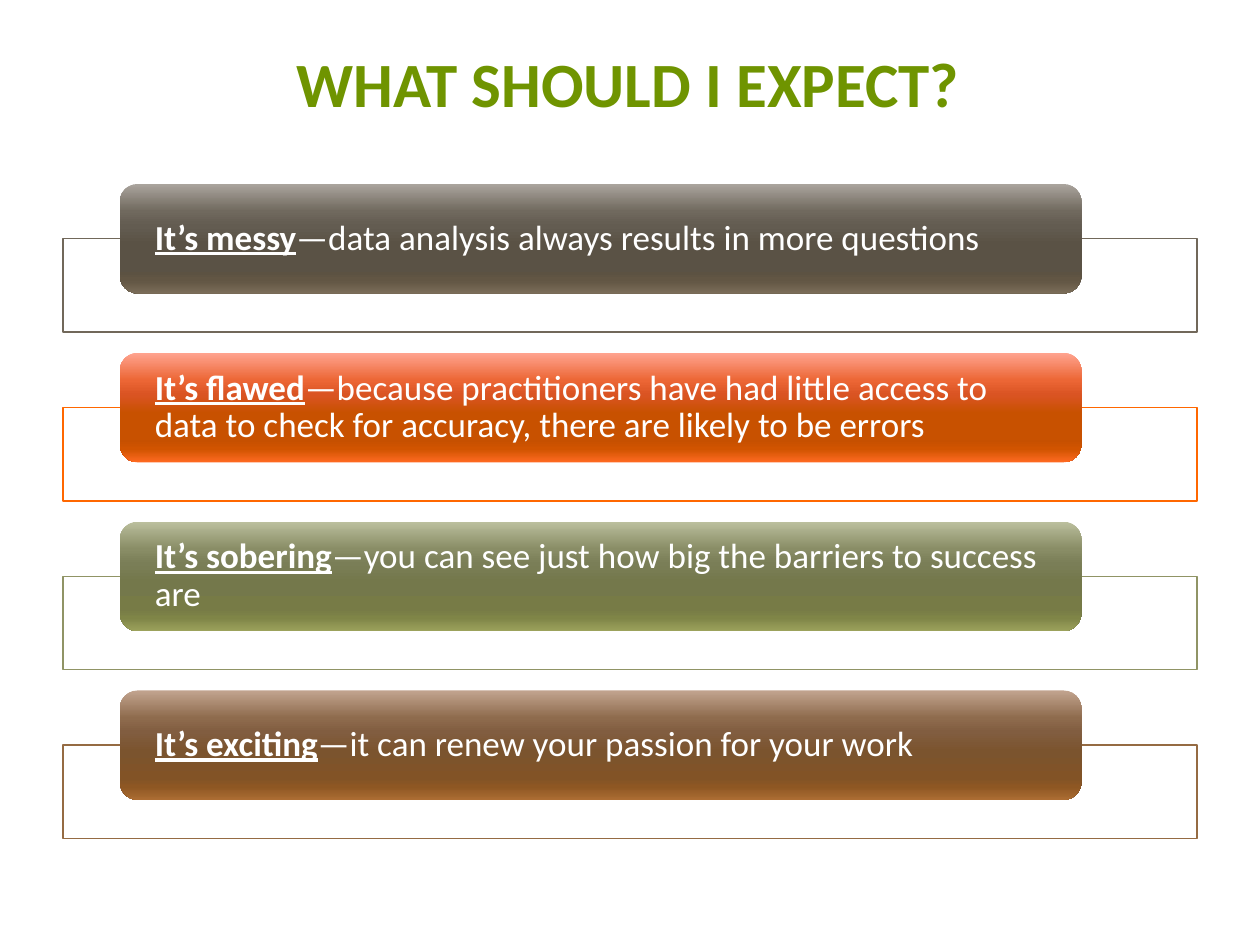
import lxml.etree
import pptx
import pptx.dml.color
import pptx.enum.shapes
import pptx.enum.text
import pptx.oxml.ns
import pptx.util

Pt = pptx.util.Pt
RGBColor = pptx.dml.color.RGBColor
qn = pptx.oxml.ns.qn
SHAPES = pptx.enum.shapes.MSO_SHAPE
ALIGN = pptx.enum.text.PP_ALIGN

WHITE = RGBColor(0xFF, 0xFF, 0xFF)
GREEN = RGBColor(0x6F, 0x94, 0x00)
TAUPE = RGBColor(0x71, 0x68, 0x5A)
ORANGE = RGBColor(0xFF, 0x67, 0x00)
OLIVE = RGBColor(0x90, 0x94, 0x65)
BROWN = RGBColor(0x95, 0x6B, 0x43)
TAUPE_SHADES, ORANGE_SHADES, OLIVE_SHADES, BROWN_SHADES = (
    [RGBColor.from_string(code) for code in codes.split()]
    for codes in (
        "AAA49D 70695E 635C51 5A5245 5C5242 625644 7A6C58",
        "FFA490 EC6635 DA5423 C85100 C65000 D15400 FF6A22",
        "BBBF9D 898D66 7A7E57 74784B 777B46 7F8547 9CA25C",
        "C2A48F 8E6B4D 815D40 7B542E 825326 8E5723 AC6D33",
    )
)
STOPS = [0, 25, 38, 55, 80, 88, 100]
ROW_STEP = 96.48

ROWS = [
    ("It’s messy", "—data analysis always results in more questions",
     TAUPE, TAUPE_SHADES),
    ("It’s flawed", "—because practitioners have had little access to data "
     "to check for accuracy, there are likely to be errors",
     ORANGE, ORANGE_SHADES),
    ("It’s sobering", "—you can see just how big the barriers to success are",
     OLIVE, OLIVE_SHADES),
    ("It’s exciting", "—it can renew your passion for your work",
     BROWN, BROWN_SHADES),
]


def add_span(para, text, size=20, color=WHITE, bold=False, underline=False):
    span = para.add_run()
    span.text = text
    span.font.name = "Calibri"
    span.font.size = Pt(size)
    span.font.color.rgb = color
    span.font.bold = bold
    span.font.underline = underline


def set_gradient(shape, shades):
    shape.fill.gradient()
    gradient = shape._element.spPr.find(qn("a:gradFill"))
    for child in list(gradient):
        gradient.remove(child)
    stops = lxml.etree.SubElement(gradient, qn("a:gsLst"))
    for position, shade in zip(STOPS, shades):
        stop = lxml.etree.SubElement(stops, qn("a:gs"), pos=str(position * 1000))
        lxml.etree.SubElement(stop, qn("a:srgbClr"), val=str(shade))
    lxml.etree.SubElement(gradient, qn("a:lin"), ang="5400000", scaled="0")


deck = pptx.Presentation()
deck.slide_width, deck.slide_height = Pt(720), Pt(540)
page = deck.slides.add_slide(deck.slide_layouts[6])

title = page.shapes.add_textbox(Pt(33.84), Pt(18), Pt(650.16), Pt(57.6))
title.text_frame.word_wrap = True
title.text_frame.vertical_anchor = pptx.enum.text.MSO_ANCHOR.MIDDLE
para = title.text_frame.paragraphs[0]
para.alignment = ALIGN.CENTER
add_span(para, "WHAT SHOULD I EXPECT?", size=36, color=GREEN, bold=True)

for index, (lead, detail, color, shades) in enumerate(ROWS):
    top = 105.12 + index * ROW_STEP

    frame = page.shapes.add_shape(
        SHAPES.RECTANGLE, Pt(36), Pt(top + 31.2), Pt(648), Pt(53.5))
    frame.shadow.inherit = False
    frame.fill.solid()
    frame.fill.fore_color.rgb = WHITE
    frame.line.color.rgb = color
    frame.line.width = Pt(0.75)

    box = page.shapes.add_shape(
        SHAPES.ROUNDED_RECTANGLE, Pt(68.4), Pt(top), Pt(549.6), Pt(62.64))
    box.shadow.inherit = False
    set_gradient(box, shades)
    box.line.fill.background()

    text = box.text_frame
    text.word_wrap = True
    text.vertical_anchor = pptx.enum.text.MSO_ANCHOR.MIDDLE
    text.margin_left = text.margin_right = Pt(17)
    text.margin_top = text.margin_bottom = Pt(0)
    para = text.paragraphs[0]
    para.alignment = ALIGN.LEFT
    para.line_spacing = 0.9
    add_span(para, lead, bold=True, underline=True)
    add_span(para, detail)

deck.save("out.pptx")
